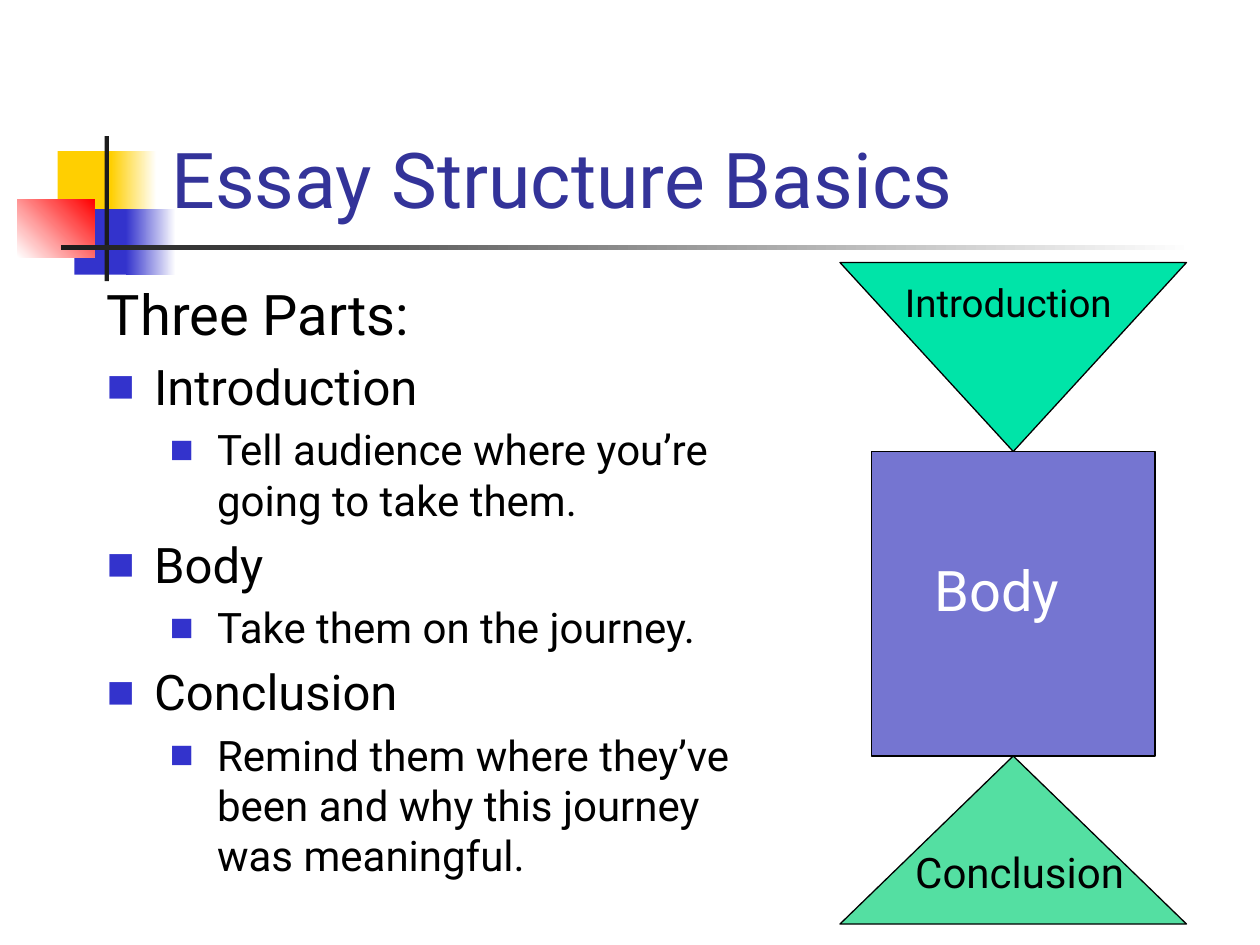
from lxml.etree import SubElement
from pptx import Presentation
from pptx.dml.color import RGBColor
from pptx.enum.shapes import MSO_SHAPE as SHAPE
from pptx.enum.text import MSO_ANCHOR as ANCHOR, PP_ALIGN as ALIGN
from pptx.oxml.ns import qn
from pptx.util import Pt

FONT = "Roboto"
BLACK = RGBColor(0x00, 0x00, 0x00)
WHITE = RGBColor(0xFF, 0xFF, 0xFF)
INK = RGBColor(0x1C, 0x1C, 0x1C)
YELLOW = RGBColor(0xFF, 0xCF, 0x01)
BLUE = RGBColor(0x33, 0x33, 0xCC)
RED = RGBColor(0xFF, 0x00, 0x00)
NAVY = RGBColor(0x33, 0x33, 0x99)
MINT = RGBColor(0x00, 0xE4, 0xA8)
GREEN = RGBColor(0x54, 0xDF, 0xA2)
VIOLET = RGBColor(0x75, 0x75, 0xD1)

TITLE = "Essay Structure Basics"
HEADING = "Three Parts:"
PARTS = [
    ("Introduction", "Tell audience where you’re going to take them."),
    ("Body", "Take them on the journey."),
    ("Conclusion", "Remind them where they’ve been and why this journey was meaningful."),
]
DECOR = [
    ((33, 86.4, 34.5, 37.4), (YELLOW,), 0),
    ((63.4, 86.4, 26, 37.4), (YELLOW, WHITE), 0),
    ((42.5, 119.5, 33.1, 37.4), (BLUE,), 0),
    ((72, 119.5, 28.5, 37.4), (BLUE, WHITE), 0),
    ((10, 113.8, 44, 33.1), (WHITE, RED), 45),
    ((59.8, 77.8, 2.5, 82.8), (INK,), 0),
    ((34.6, 140.2, 648, 2.5), (INK, WHITE), 0),
]
DIAGRAM_CENTER, DIAGRAM_TOP = 579, 150
DIAGRAM = [
    (SHAPE.ISOSCELES_TRIANGLE, 198, 108, MINT, 180),
    (SHAPE.RECTANGLE, 162, 174, VIOLET, 0),
    (SHAPE.ISOSCELES_TRIANGLE, 198, 96, GREEN, 0),
]
LABELS = [
    ((510, 156, 150, 34), 7.2, 22),
    None,
    ((510, 480, 150, 36), 13, 24),
]


def add_shape(slide, kind, box, colors, angle=0):
    sp = slide.shapes.add_shape(kind, *map(Pt, box))
    sp.shadow.inherit = False
    sp.line.fill.background()
    if len(colors) == 1:
        sp.fill.solid()
        sp.fill.fore_color.rgb = colors[0]
    else:
        sp.fill.gradient()
        sp.fill.gradient_angle = angle
        for stop, color in zip(sp.fill.gradient_stops, colors):
            stop.color.rgb = color
    return sp


def add_run(p, text, size, color=BLACK):
    p.alignment = ALIGN.LEFT
    r = p.add_run()
    r.text = text
    r.font.name, r.font.size = FONT, Pt(size)
    r.font.color.rgb = color


def add_text_box(slide, box):
    tf = slide.shapes.add_textbox(*map(Pt, box)).text_frame
    tf.word_wrap = True
    return tf


def add_item(p, text, size, level=0, bullet=True):
    p.level = level
    p.space_before = Pt(size * 0.2)
    add_run(p, text, size)
    pPr = p._p.get_or_add_pPr()
    pPr.set("marL", str(Pt(27 + 36 * level)))
    pPr.set("indent", str(Pt(-27)))
    if bullet:
        SubElement(SubElement(pPr, qn("a:buClr")), qn("a:srgbClr"), val=str(BLUE))
        SubElement(pPr, qn("a:buSzPct"), val="60000")
        SubElement(pPr, qn("a:buFont"), typeface=FONT)
        SubElement(pPr, qn("a:buChar"), char="■")


prs = Presentation()
prs.slide_width, prs.slide_height = Pt(720), Pt(540)
s = prs.slides.add_slide(prs.slide_layouts[5])

for box, colors, angle in DECOR:
    add_shape(s, SHAPE.RECTANGLE, box, colors, angle)

title = s.shapes.title
title.left, title.top, title.width, title.height = map(Pt, (90.7, 16.6, 613.4, 115.2))
tf = title.text_frame
tf.vertical_anchor = ANCHOR.BOTTOM
add_run(tf.paragraphs[0], TITLE, 44, NAVY)

tf = add_text_box(s, (54, 156.2, 372.2, 365.8))
add_item(tf.paragraphs[0], HEADING, 32, bullet=False)
for name, purpose in PARTS:
    add_item(tf.add_paragraph(), name, 28)
    add_item(tf.add_paragraph(), purpose, 24, level=1)

top = DIAGRAM_TOP
for (kind, w, h, color, rotation), (name, _), label in zip(DIAGRAM, PARTS, LABELS):
    sp = add_shape(s, kind, (DIAGRAM_CENTER - w / 2, top, w, h), (color,))
    sp.rotation = rotation
    sp.line.color.rgb, sp.line.width = BLACK, Pt(0.75)
    top += h
    if label:
        box, inset, size = label
        tf = add_text_box(s, box)
        tf.margin_left = Pt(inset)
        add_run(tf.paragraphs[0], name, size)
    else:
        tf = sp.text_frame
        tf.vertical_anchor = ANCHOR.TOP
        tf.margin_left, tf.margin_top = Pt(36), Pt(59.5)
        add_run(tf.paragraphs[0], name, 32, WHITE)

prs.save("out.pptx")
